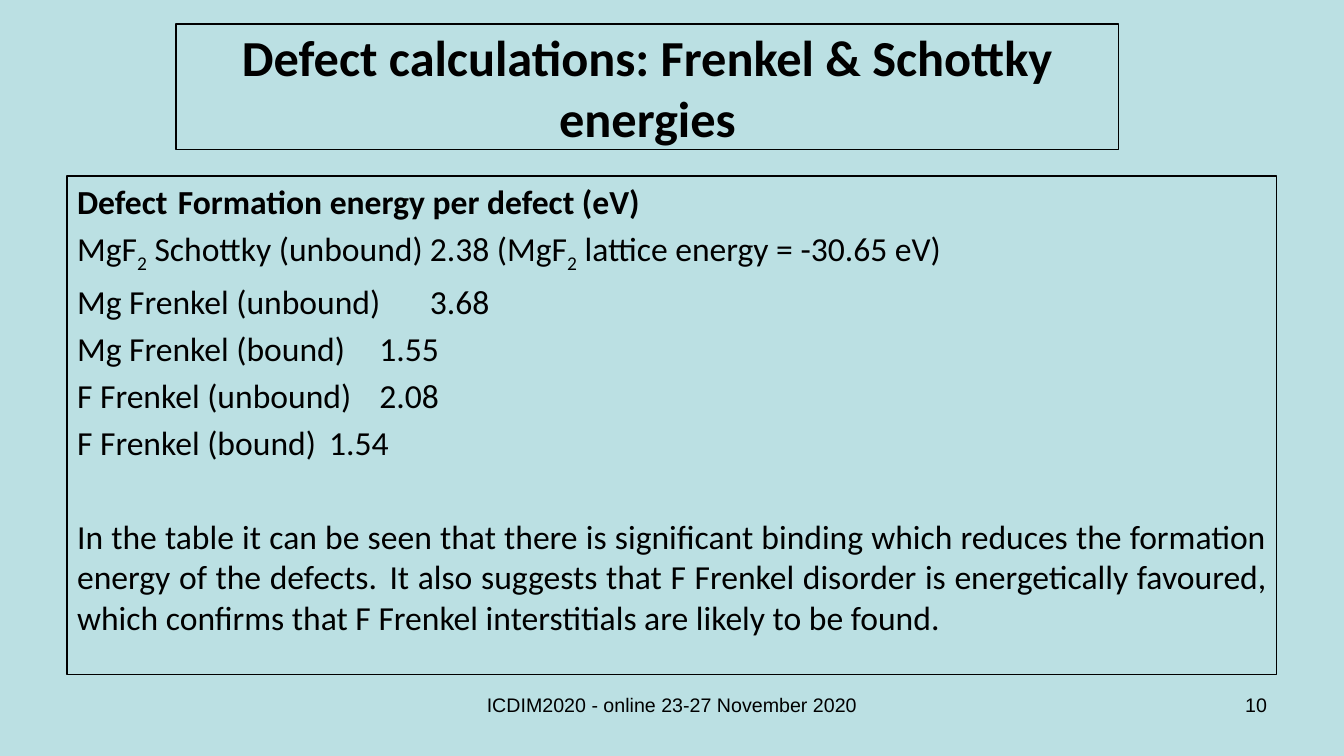
"""Build the slide on Frenkel and Schottky defect energies."""
import pptx
import pptx.dml.color
import pptx.enum.text
import pptx.oxml
import pptx.oxml.ns
import pptx.util

TITLE = "Defect calculations: Frenkel & Schottky energies"
HEADER = ("Defect", "Formation energy per defect (eV)")
ROWS = [
    ("MgF_2_ Schottky (unbound)", "2.38 (MgF_2_ lattice energy = -30.65 eV)"),
    ("Mg Frenkel (unbound)", "3.68"),
    ("Mg Frenkel (bound)", "1.55"),
    ("F Frenkel (unbound)", "2.08"),
    ("F Frenkel (bound)", "1.54"),
]
CONCLUSION = [
    ("In the table it can be seen that there is significant binding which "
     "reduces the formation energy of the defects.", 24),
    ("\t ", 18),
    ("It also suggests that F Frenkel disorder is energetically favoured, "
     "which confirms that F Frenkel interstitials are likely to be found.", 24),
]
ALIGN = pptx.enum.text.PP_ALIGN
FOOTERS = [
    ("ICDIM2020 - online 23-27 November 2020", (403, 688, 538, 52), ALIGN.CENTER),
    ("10", (964, 688, 313, 52), ALIGN.RIGHT),
]
TITLE_BOX = (176, 24, 943, 126)
BODY_BOX = (67, 176, 1210, 499)
VALUE_TAB = 605
ROW_GAP, CONCLUSION_GAP = 4.8, 38.4
INK, BACKGROUND = "000000", "BBE0E3"


def px(n):
    return pptx.util.Emu(round(n * 914400 / 100.8))


def color(value):
    return pptx.dml.color.RGBColor.from_string(value)


def place(sp, box):
    sp.left, sp.top, sp.width, sp.height = map(px, box)


def prepare(sp, box, anchor):
    place(sp, box)
    sp.line.color.rgb = color(INK)
    sp.line.width = pptx.util.Pt(0.75)
    tf = sp.text_frame
    tf.word_wrap = True
    tf.auto_size = pptx.enum.text.MSO_AUTO_SIZE.NONE
    tf.vertical_anchor = anchor
    return tf


def add_run(p, text, size, font="Calibri", bold=False):
    r = p.add_run()
    r.text = text
    r.font.size = pptx.util.Pt(size)
    r.font.name = font
    r.font.bold = bold
    r.font.color.rgb = color(INK)
    return r


def add_paragraph(tf, first, gap, tab=None):
    p = tf.paragraphs[0] if first else tf.add_paragraph()
    pPr = p._p.get_or_add_pPr()
    pPr.set("marL", "0")
    pPr.set("indent", "0")
    pptx.oxml.ns.qn("a:buNone")
    pPr.append(pptx.oxml.parse_xml(
        f'<a:buNone {pptx.oxml.ns.nsdecls("a")}/>'))
    if tab:
        pPr.append(pptx.oxml.parse_xml(
            f'<a:tabLst {pptx.oxml.ns.nsdecls("a")}>'
            f'<a:tab pos="{px(tab)}" algn="l"/></a:tabLst>'))
    p.alignment = ALIGN.JUSTIFY
    p.space_before = pptx.util.Pt(0 if first else gap)
    return p


def fill_body(tf):
    for i, row in enumerate([HEADER] + ROWS):
        p = add_paragraph(tf, i == 0, ROW_GAP, VALUE_TAB)
        for j, part in enumerate("\t".join(row).split("_")):
            r = add_run(p, part, 24, bold=i == 0)
            if j % 2:
                r.font._element.set("baseline", "-25000")
    p = add_paragraph(tf, False, CONCLUSION_GAP)
    for text, size in CONCLUSION:
        add_run(p, text, size)


def main():
    prs = pptx.Presentation()
    prs.slide_width, prs.slide_height = px(1344), px(756)
    s = prs.slides.add_slide(prs.slide_layouts[1])
    s.background.fill.solid()
    s.background.fill.fore_color.rgb = color(BACKGROUND)

    anchors = pptx.enum.text.MSO_ANCHOR
    p = prepare(s.shapes.title, TITLE_BOX, anchors.MIDDLE).paragraphs[0]
    p.alignment = ALIGN.CENTER
    add_run(p, TITLE, 36, bold=True)
    fill_body(prepare(s.placeholders[1], BODY_BOX, anchors.TOP))

    for text, box, align in FOOTERS:
        tf = s.shapes.add_textbox(*map(px, box)).text_frame
        tf.word_wrap = True
        tf.paragraphs[0].alignment = align
        add_run(tf.paragraphs[0], text, 14, "Arial")
    prs.save("out.pptx")


if __name__ == "__main__":
    main()
